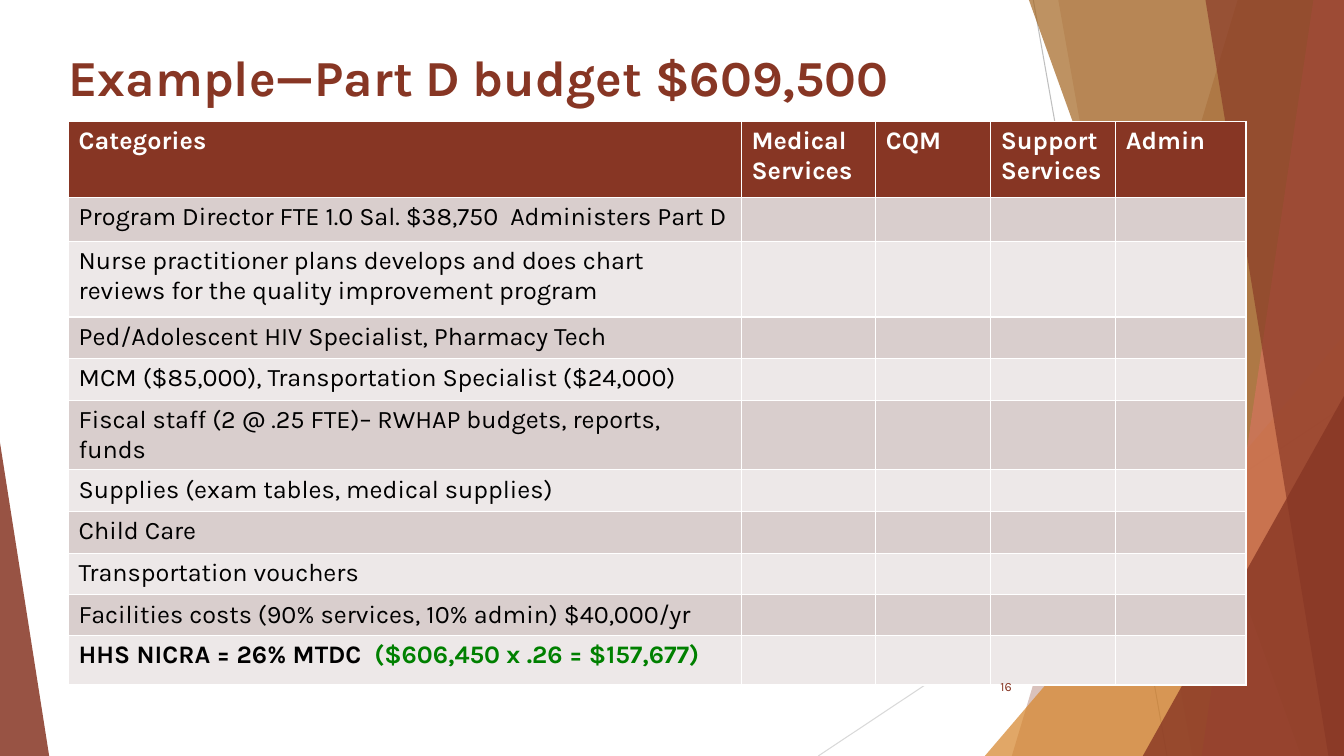
from dataclasses import dataclass
from lxml import etree
from pptx import Presentation, util as u
from pptx.dml.color import RGBColor
from pptx.enum import shapes, text
from pptx.oxml import ns


@dataclass(frozen=True)
class Theme:
    font: str = "Karla"
    rust: str = "873624"
    amber: str = "D6862D"
    ochre: str = "A36520"
    coral: str = "D4745E"
    dark: str = "D9CECD"
    light: str = "EDE8E8"
    white: str = "FFFFFF"
    black: str = "000000"
    green: str = "008000"
    rays: tuple = ("BFBFBF", "D9D9D9")
    head: int = 36
    body: int = 18
    small: int = 9


@dataclass(frozen=True)
class Box:
    """A region, in centimetres."""
    x: float
    y: float
    w: float
    h: float

    @property
    def right(self):
        return self.x + self.w

    @property
    def base(self):
        return self.y + self.h

    def place(self):
        return [u.Cm(n) for n in (self.x, self.y, self.w, self.h)]


T = Theme()
PAGE = Box(0, 0, 33.87, 19.05)

# Facets, back to front. Slab: top left x, bottom left x.
# Wedge: left, width, height, apex.
FACETS = [
    ("slab", (31.19, 25.5), T.rust, 30),
    ("slab", (26.67, 30.05), T.rust, 20),
    ("wedge", (24.82, 9.05, 10.59, 1), T.amber, 72),
    ("slab", (25.93, 32.79), T.ochre, 70),
    ("slab", (33.1, 30.28), T.coral, 70),
    ("slab", (30.38, 33.48), T.rust, 65),
    ("wedge", (28.8, 5.07, 9.07, 1), T.rust, 80),
    ("wedge", (0, 1.24, 7.9, 0), T.rust, 85),
]
RAYS = [(26.04, 0, 29.41, 19.05), (33.87, 10.24, 20.62, 19.05)]

HEADS = ["Categories", "Medical Services", "CQM", "Support Services", "Admin"]
ITEMS = [
    "Program Director FTE 1.0 Sal. $38,750  Administers Part D",
    "Nurse practitioner plans develops and does chart reviews "
    "for the quality improvement program",
    "Ped/Adolescent HIV Specialist, Pharmacy Tech",
    "MCM ($85,000), Transportation Specialist ($24,000)",
    "Fiscal staff (2 @ .25 FTE)– RWHAP budgets, reports, funds",
    "Supplies (exam tables, medical supplies)",
    "Child Care",
    "Transportation vouchers",
    "Facilities costs (90% services, 10% admin) $40,000/yr",
]
TOTAL = [("HHS NICRA = 26% MTDC  ", T.black),
         ("($606,450 x .26 = $157,677)", T.green)]
COLS = [16.96, 3.38, 2.9, 3.15, 3.28]
ROWS = [1.91, 1.12, 1.9, 1.05, 1.05, 1.75, 1.05, 1.05, 1.05, 1.01, 1.24]


def add_run(para, words, size, color, bold=False):
    run = para.add_run()
    run.text = words
    font = run.font
    font.name, font.size, font.bold = T.font, u.Pt(size), bold
    font.color.rgb = RGBColor.from_string(color)


def paint(shape, color, alpha):
    shape.shadow.inherit = False
    shape.line.fill.background()
    shape.fill.solid()
    shape.fill.fore_color.rgb = RGBColor.from_string(color)
    tint = shape.element.spPr.find(".//" + ns.qn("a:srgbClr"))
    etree.SubElement(tint, ns.qn("a:alpha"), val=str(alpha * 1000))


def add_slab(slide, box, top, foot):
    pen = slide.shapes.build_freeform(u.Cm(box.x + top), u.Cm(box.y))
    ends = [(box.right, box.y), (box.right, box.base), (box.x + foot, box.base)]
    pen.add_line_segments([(u.Cm(x), u.Cm(y)) for x, y in ends])
    return pen.convert_to_shape()


def add_wedge(slide, box, left, wide, high, apex):
    part = Box(box.x + left, box.base - high, wide, high)
    shape = slide.shapes.add_shape(
        shapes.MSO_SHAPE.ISOSCELES_TRIANGLE, *part.place())
    shape.adjustments[0] = apex
    return shape


def add_backdrop(slide, box):
    # Thin rays
    for (x1, y1, x2, y2), color in zip(RAYS, T.rays):
        ray = slide.shapes.add_connector(
            shapes.MSO_CONNECTOR.STRAIGHT,
            u.Cm(box.x + x1), u.Cm(box.y + y1),
            u.Cm(box.x + x2), u.Cm(box.y + y2))
        ray.line.color.rgb = RGBColor.from_string(color)
        ray.line.width = u.Pt(0.75)
        etree.SubElement(ray.element.spPr, ns.qn("a:effectLst"))
    # Clear facets
    makers = {"slab": add_slab, "wedge": add_wedge}
    for kind, size, color, alpha in FACETS:
        paint(makers[kind](slide, box, *size), color, alpha)


def add_title(slide, box, words):
    title = slide.shapes.title
    title.left, title.top, title.width, title.height = box.place()
    frame = title.text_frame
    frame.auto_size = text.MSO_AUTO_SIZE.NONE
    frame.vertical_anchor = text.MSO_ANCHOR.MIDDLE
    para = frame.paragraphs[0]
    para.alignment = text.PP_ALIGN.LEFT
    add_run(para, words, T.head, T.rust, True)


def add_budget(slide, box):
    grid = slide.shapes.add_table(len(ROWS), len(COLS), *box.place()).table
    for col, wide in zip(grid.columns, COLS):
        col.width = u.Cm(wide)
    # Bands
    for i, (row, high) in enumerate(zip(grid.rows, ROWS)):
        row.height = u.Cm(high)
        band = T.rust if i == 0 else T.dark if i % 2 else T.light
        for cell in row.cells:
            cell.fill.solid()
            cell.fill.fore_color.rgb = RGBColor.from_string(band)
            cell.text_frame.paragraphs[0].font.size = u.Pt(T.body)
    # Wording
    for j, words in enumerate(HEADS):
        para = grid.cell(0, j).text_frame.paragraphs[0]
        add_run(para, words, T.body, T.white, True)
    for i, words in enumerate(ITEMS, 1):
        para = grid.cell(i, 0).text_frame.paragraphs[0]
        add_run(para, words, T.body, T.black)
    para = grid.cell(len(ROWS) - 1, 0).text_frame.paragraphs[0]
    for words, color in TOTAL:
        add_run(para, words, T.body, color, True)


def add_number(slide, box, words):
    frame = slide.shapes.add_textbox(*box.place()).text_frame
    frame.word_wrap = True
    frame.vertical_anchor = text.MSO_ANCHOR.MIDDLE
    para = frame.paragraphs[0]
    para.alignment = text.PP_ALIGN.RIGHT
    add_run(para, words, T.small, T.rust)


def main():
    deck = Presentation()
    deck.slide_width, deck.slide_height = u.Cm(PAGE.w), u.Cm(PAGE.h)
    slide = deck.slides.add_slide(deck.slide_layouts[5])
    add_backdrop(slide, PAGE)
    add_title(slide, Box(1.47, 0.89, 24.18, 2.06),
              "Example—Part D budget $609,500")
    add_budget(slide, Box(1.73, 3.06, sum(COLS), sum(ROWS)))
    add_number(slide, Box(23.85, 16.79, 1.9, 1.02), "16")
    deck.save("out.pptx")


if __name__ == "__main__":
    main()
